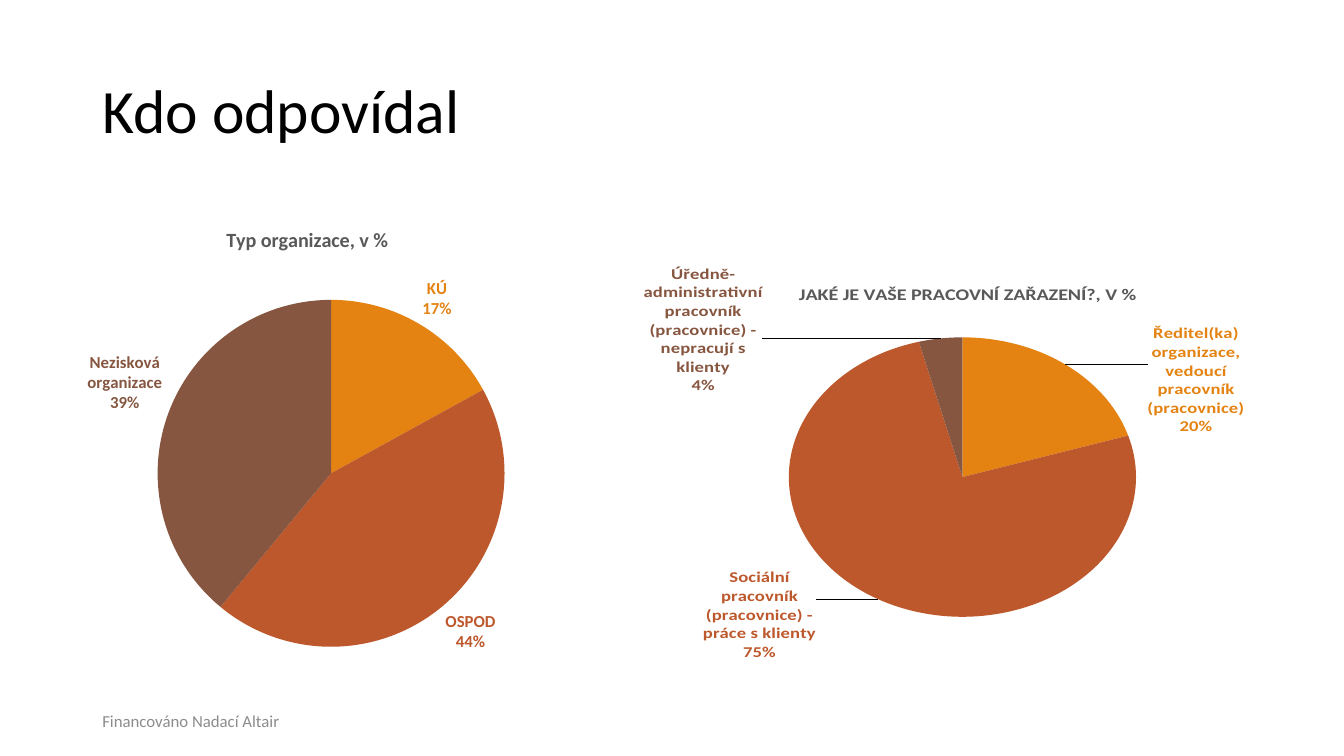
from lxml import etree
from pptx import Presentation
from pptx.chart.data import CategoryChartData
from pptx.dml.color import RGBColor
from pptx.enum import chart as ch, text
from pptx.oxml import ns
from pptx.util import Pt

FONT = "Calibri"
SLICES = ("E48312", "BD582C", "865640")


def rgb(value):
    """Turn a hex string into a colour."""
    return RGBColor.from_string(value)


def style(font, size, color, bold=False):
    """Set the face, size, colour and weight of a font."""
    font.name, font.size, font.bold = FONT, Pt(size), bold
    font.color.rgb = rgb(color)


def element(tag, **attrs):
    """Make a chart XML element."""
    el = etree.Element(ns.qn("c:" + tag))
    for key, value in attrs.items():
        el.set(key, str(value))
    return el


def layout(**parts):
    """Make a manual layout from its named parts."""
    el = element("layout")
    manual = etree.SubElement(el, ns.qn("c:manualLayout"))
    for tag, value in parts.items():
        manual.append(element(tag, val=value))
    return el


def add_text(slide, box, words, size, color, spacing=1.0):
    """Add one vertically centred line of text."""
    sp = slide.shapes.add_textbox(*map(Pt, box))
    tf = sp.text_frame
    tf.word_wrap = True
    tf.vertical_anchor = text.MSO_ANCHOR.MIDDLE
    p = tf.paragraphs[0]
    p.line_spacing = spacing
    r = p.add_run()
    r.text = words
    style(r.font, size, color)


def add_title(chart, words, x, y):
    """Give a chart its title at a fixed place."""
    p = chart.chart_title.text_frame.paragraphs[0]
    r = p.add_run()
    r.text = words
    style(r.font, 14.4, "595959", True)
    title = chart.chart_title._element
    for old in title.findall(ns.qn("c:layout")):
        title.remove(old)
    place = layout(xMode="edge", yMode="edge", x=x, y=y)
    title.find(ns.qn("c:tx")).addnext(place)
    chart.chart_title.include_in_layout = False


def label_point(point, color, size, shift):
    """Label a slice with its category and per cent value."""
    label = point.data_label
    style(label.font, size, color, True)
    label.position = ch.XL_LABEL_POSITION.OUTSIDE_END
    dLbl = point._element.find(".//" + ns.qn("c:dLbls")).findall(ns.qn("c:dLbl"))[-1]
    dLbl.find(ns.qn("c:showCatName")).set("val", "1")
    dLbl.find(ns.qn("c:txPr")).addprevious(
        element("numFmt", formatCode='0"%"', sourceLinked=0))
    separator = element("separator")
    separator.text = "\n"
    dLbl.append(separator)
    if shift:
        dLbl.find(ns.qn("c:idx")).addnext(layout(x=shift[0], y=shift[1]))


def add_pie(slide, box, title, title_at, plot_box, label_size, slices):
    """Add a pie from (category, value, label shift) slices."""
    data = CategoryChartData(number_format="0")
    data.categories = [name for name, _, _ in slices]
    data.add_series("Series 1", [value for _, value, _ in slices])
    chart = slide.shapes.add_chart(
        ch.XL_CHART_TYPE.PIE, *map(Pt, box), data).chart
    style(chart.font, label_size, "000000")
    chart.has_legend = False
    add_title(chart, title, *title_at)
    plot = chart.plots[0]
    plot.vary_by_categories = True
    area = chart._chartSpace.find(".//" + ns.qn("c:plotArea"))
    for old in area.findall(ns.qn("c:layout")):
        area.remove(old)
    area.insert(0, layout(layoutTarget="inner", xMode="edge", yMode="edge",
                          **dict(zip("xywh", plot_box))))
    for i, (color, (_, _, shift)) in enumerate(zip(SLICES, slices)):
        point = plot.series[0].points[i]
        point.format.fill.solid()
        point.format.fill.fore_color.rgb = rgb(color)
        point.format.line.fill.background()
        label_point(point, color, label_size, shift)


def main():
    """Build the slide."""
    prs = Presentation()
    prs.slide_width, prs.slide_height = Pt(960), Pt(540)
    slide = prs.slides.add_slide(prs.slide_layouts[6])
    add_text(slide, (66, 28.8, 828, 104.4), "Kdo odpovídal", 44, "000000", 0.9)
    add_pie(slide, (36.7, 145.4, 360, 344.2), "Typ organizace, v %",
            (0.34, 0.04), (0.21, 0.2, 0.69, 0.72), 12,
            [("KÚ", 17, None), ("OSPOD", 44, None),
             ("Nezisková organizace", 39, None)])
    add_pie(slide, (455.8, 145.4, 468, 352), "JAKÉ JE VAŠE PRACOVNÍ ZAŘAZENÍ?, V %",
            (0.24, 0.04), (0.23, 0.18, 0.53, 0.71), 13.3,
            [("Ředitel(ka) organizace, vedoucí pracovník (pracovnice)", 20,
              (0.12, 0.19)),
             ("Sociální pracovník (pracovnice) - práce s klienty", 75,
              (-0.09, -0.07)),
             ("Úředně-administrativní pracovník (pracovnice) - nepracují s klienty", 4,
              (-0.27, 0.15))])
    add_text(slide, (66, 500.4, 576, 28.8), "Financováno Nadací Altair", 12, "8C8C8C")
    prs.save("out.pptx")


if __name__ == "__main__":
    main()
